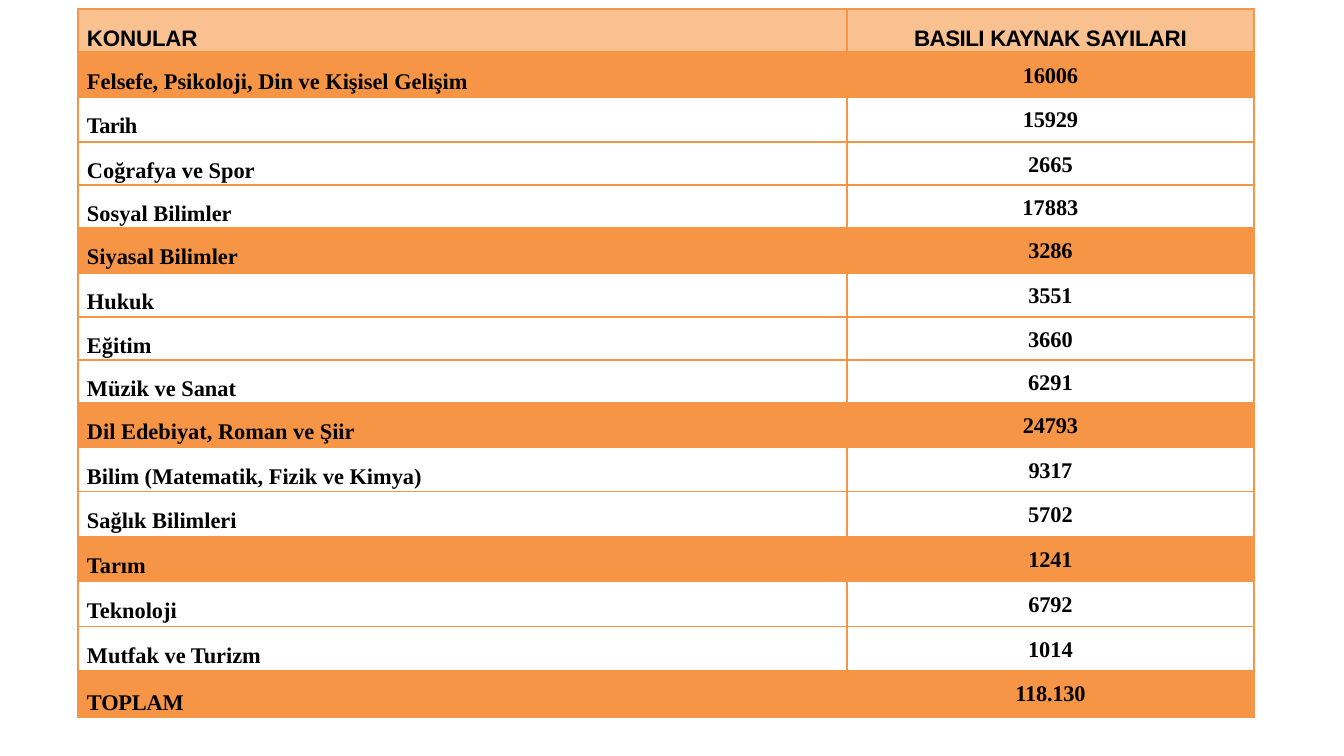
from lxml.etree import SubElement as Sub
from pptx import Presentation
from pptx.dml.color import RGBColor
from pptx.enum.text import PP_ALIGN as Align
from pptx.oxml.ns import qn
from pptx.util import Pt

SCALE = 914400 / 134.4
BLACK = RGBColor(0, 0, 0)
ORANGE = RGBColor(0xF7, 0x95, 0x46)
PEACH = RGBColor(0xF9, 0xC0, 0x90)
SIDES = "LRTB"
HEAD = [("KONULAR", -10)], [("BASILI ", -30), ("KAYNAK ", -40), ("SAYILARI", -10)]
ROWS = [
    ("Felsefe, Psikoloji, Din ve Kişisel Gelişim", 0, "16006", -10, 44, True),
    ("Tarih", -30, "15929", -10, 45, False),
    ("Coğrafya ve Spor", 0, "2665", 0, 43, False),
    ("Sosyal Bilimler", 0, "17883", 0, 43, False),
    ("Siyasal Bilimler", 0, "3286", -10, 45, True),
    ("Hukuk", 0, "3551", -10, 44, False),
    ("Eğitim", 0, "3660", 0, 43, False),
    ("Müzik ve Sanat", 0, "6291", 0, 43, False),
    ("Dil Edebiyat, Roman ve Şiir", 0, "24793", -10, 45, True),
    ("Bilim (Matematik, Fizik ve Kimya)", 0, "9317", -20, 44, False),
    ("Sağlık Bilimleri", 0, "5702", 0, 45, False),
    ("Tarım", 0, "1241", -10, 45, True),
    ("Teknoloji", 0, "6792", -10, 45, False),
    ("Mutfak ve Turizm", 0, "1014", 0, 44, False),
    ("TOPLAM", -10, "118.130", -10, 47, True),
]


def px(num):
    """Turn pixels into EMU."""
    return round(num * SCALE)


def assign(obj, vals):
    """Set attributes from a dict."""
    for key, val in vals.items():
        setattr(obj, key, val)


def edge(cell, thick):
    """Draw the four borders, thick on the named side."""
    props = cell._tc.get_or_add_tcPr()
    for side in SIDES:
        width = Pt(2.25 if side == thick else 1)
        line = Sub(props, qn(f"a:ln{side}"), w=str(width))
        fill = Sub(line, qn("a:solidFill"))
        Sub(fill, qn("a:srgbClr"), val=str(ORANGE))


def paint(cell, color, alpha=100):
    """Fill a cell, or leave it clear when there is no color."""
    if color is None:
        cell.fill.background()
        return
    cell.fill.solid()
    cell.fill.fore_color.rgb = color
    if alpha < 100:
        tone = cell._tc.tcPr.find(".//" + qn("a:srgbClr"))
        Sub(tone, qn("a:alpha"), val=str(alpha * 1000))


def write(cell, runs, face, top, center):
    """Write spaced bold runs into a cell."""
    assign(cell, dict(margin_left=0, margin_right=0, margin_bottom=0, margin_top=px(top)))
    para = cell.text_frame.paragraphs[0]
    para.alignment = Align.CENTER if center else Align.LEFT
    if not center:
        para._p.get_or_add_pPr().set("marL", str(px(9)))
    for text, gap in runs:
        run = para.add_run()
        run.text = text
        assign(run.font, dict(name=face, size=Pt(12), bold=True))
        run.font.color.rgb = BLACK
        run._r.get_or_add_rPr().set("spc", str(gap))


def add_grid(slide, left, top, width, height):
    """Place the table of subjects and counts in the given box."""
    box = [px(num) for num in (left, top, width, height)]
    grid = slide.shapes.add_table(len(ROWS) + 1, 2, *box).table
    assign(grid, dict(first_row=False, horz_banding=False))
    for col, wide in zip(grid.columns, (769, width - 769)):
        col.width = px(wide)
    grid.rows[0].height = px(height - sum(row[4] for row in ROWS))
    for col, runs in enumerate(HEAD):
        cell = grid.cell(0, col)
        edge(cell, "B")
        paint(cell, PEACH)
        write(cell, runs, "Arial", 17, col == 1)
    for num, (label, gap, count, space, tall, tint) in enumerate(ROWS, 1):
        grid.rows[num].height = px(tall)
        first = 20 if num == len(ROWS) else 17
        parts = (label, gap, first), (count, space, 11)
        for col, (text, track, inset) in enumerate(parts):
            cell = grid.cell(num, col)
            edge(cell, "T" if num == 1 else None)
            paint(cell, ORANGE if tint else None, 20)
            write(cell, [(text, track)], "Times New Roman", inset, col == 1)


def main():
    """Build and save the slide."""
    deck = Presentation()
    assign(deck, dict(slide_width=px(1344), slide_height=px(756)))
    slide = deck.slides.add_slide(deck.slide_layouts[6])
    add_grid(slide, 78, 9, 1176, 709)
    deck.save("out.pptx")


if __name__ == "__main__":
    main()
